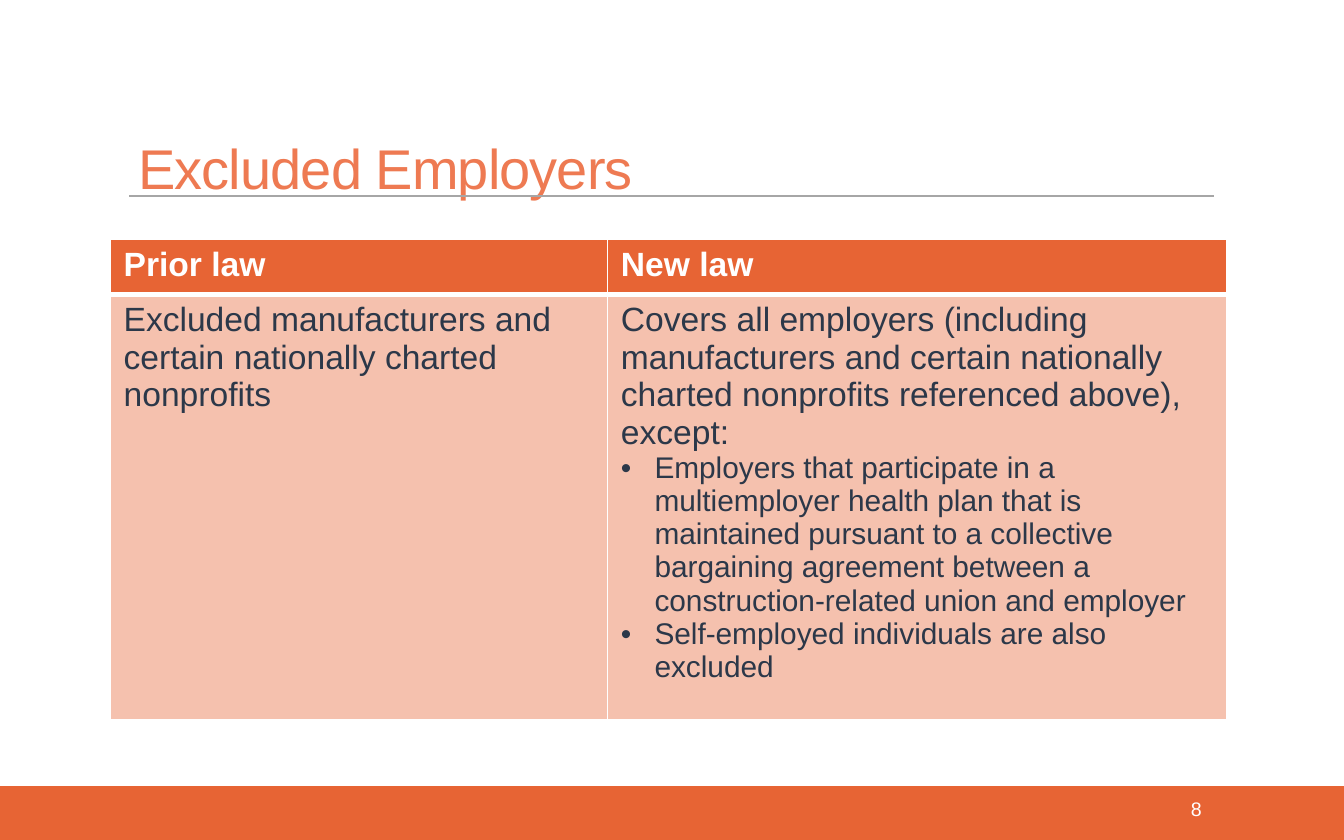
from lxml.etree import SubElement
from pptx import Presentation
from pptx.dml.color import RGBColor
from pptx.enum.shapes import MSO_CONNECTOR, MSO_SHAPE
from pptx.enum.text import MSO_ANCHOR, MSO_AUTO_SIZE, PP_ALIGN
from pptx.oxml.ns import qn
from pptx.util import Pt

PX = 9144
ORANGE, CORAL, PEACH = "E76434", "EE7A52", "F5C1AE"
WHITE, NAVY, GRAY = "FFFFFF", "2C3849", "A6A6A6"

HEADERS = ["Prior law", "New law"]
PRIOR_LAW = "Excluded manufacturers and certain nationally charted nonprofits"
NEW_LAW = ("Covers all employers (including manufacturers and certain "
           "nationally charted nonprofits referenced above), except:")
EXCEPTIONS = [
    "Employers that participate in a multiemployer health plan that is "
    "maintained pursuant to a collective bargaining agreement between a "
    "construction-related union and employer",
    "Self-employed individuals are also excluded",
]


def px(*lengths):
    return [n * PX for n in lengths]


def rgb(value):
    return RGBColor.from_string(value)


def apply(target, formats):
    for name, value in formats.items():
        setattr(target, name, value)


def write(p, text, size, color, bold=False):
    r = p.add_run()
    r.text = text
    apply(r.font, {"name": "Arial", "size": Pt(size), "bold": bold})
    r.font.color.rgb = rgb(color)
    return r


def add_title(s, text):
    sp = s.shapes.title
    left, top, width, height = px(93, 97, 637, 39)
    apply(sp, {"left": left, "top": top, "width": width, "height": height})
    tf = sp.text_frame
    apply(tf, {"margin_left": 10 * PX, "margin_top": 10 * PX, "margin_bottom": 0,
               "auto_size": MSO_AUTO_SIZE.NONE, "word_wrap": True,
               "vertical_anchor": MSO_ANCHOR.TOP})
    p = tf.paragraphs[0]
    apply(p, {"alignment": PP_ALIGN.LEFT, "line_spacing": 0.85})
    r = write(p, text, 30, CORAL)
    r._r.get_or_add_rPr().set("spc", "-50")


def add_footer(s, number):
    bar = s.shapes.add_shape(MSO_SHAPE.RECTANGLE, *px(0, 585, 1000, 40))
    bar.shadow.inherit = False
    bar.fill.solid()
    bar.fill.fore_color.rgb = rgb(ORANGE)
    bar.line.fill.background()
    tf = s.shapes.add_textbox(*px(796, 585, 108, 33)).text_frame
    apply(tf, {"word_wrap": True, "vertical_anchor": MSO_ANCHOR.MIDDLE})
    p = tf.paragraphs[0]
    p.alignment = PP_ALIGN.RIGHT
    write(p, number, 10.5, WHITE)


def add_rule(s):
    line = s.shapes.add_connector(MSO_CONNECTOR.STRAIGHT, *px(96, 146, 903, 146))
    line.line.color.rgb = rgb(GRAY)
    line.line.width = Pt(1)
    SubElement(line._element.spPr, qn("a:effectLst"))


def format_cell(cell, fill, top=1, bottom=1):
    tcPr = cell._tc.get_or_add_tcPr()
    for side, width in {"L": 1, "R": 1, "T": top, "B": bottom}.items():
        ln = SubElement(tcPr, qn(f"a:ln{side}"), w=str(Pt(width)))
        SubElement(SubElement(ln, qn("a:solidFill")), qn("a:srgbClr"), val=WHITE)
    cell.fill.solid()
    cell.fill.fore_color.rgb = rgb(fill)


def add_bullet(tf, text):
    p = tf.add_paragraph()
    p.level = 1
    pPr = p._p.get_or_add_pPr()
    pPr.set("marL", str(25 * PX))
    pPr.set("indent", str(-25 * PX))
    SubElement(pPr, qn("a:buFont"), typeface="Arial")
    SubElement(pPr, qn("a:buChar"), char="•")
    write(p, text, 16, NAVY)


def add_law_table(s):
    table = s.shapes.add_table(2, 2, *px(82, 178, 831, 335)).table
    for column, width in zip(table.columns, px(370, 461)):
        column.width = width
    for row, height in zip(table.rows, px(41, 294)):
        row.height = height
    for i, (header, body) in enumerate(zip(HEADERS, [PRIOR_LAW, NEW_LAW])):
        head_cell, body_cell = table.cell(0, i), table.cell(1, i)
        format_cell(head_cell, ORANGE, bottom=3)
        format_cell(body_cell, PEACH, top=3)
        write(head_cell.text_frame.paragraphs[0], header, 18, WHITE, bold=True)
        write(body_cell.text_frame.paragraphs[0], body, 18, NAVY)
    for text in EXCEPTIONS:
        add_bullet(table.cell(1, 1).text_frame, text)


def main():
    prs = Presentation()
    prs.slide_width, prs.slide_height = px(1000, 625)
    s = prs.slides.add_slide(prs.slide_layouts[5])
    add_footer(s, "8")
    add_rule(s)
    add_title(s, "Excluded Employers")
    add_law_table(s)
    prs.save("out.pptx")


if __name__ == "__main__":
    main()
